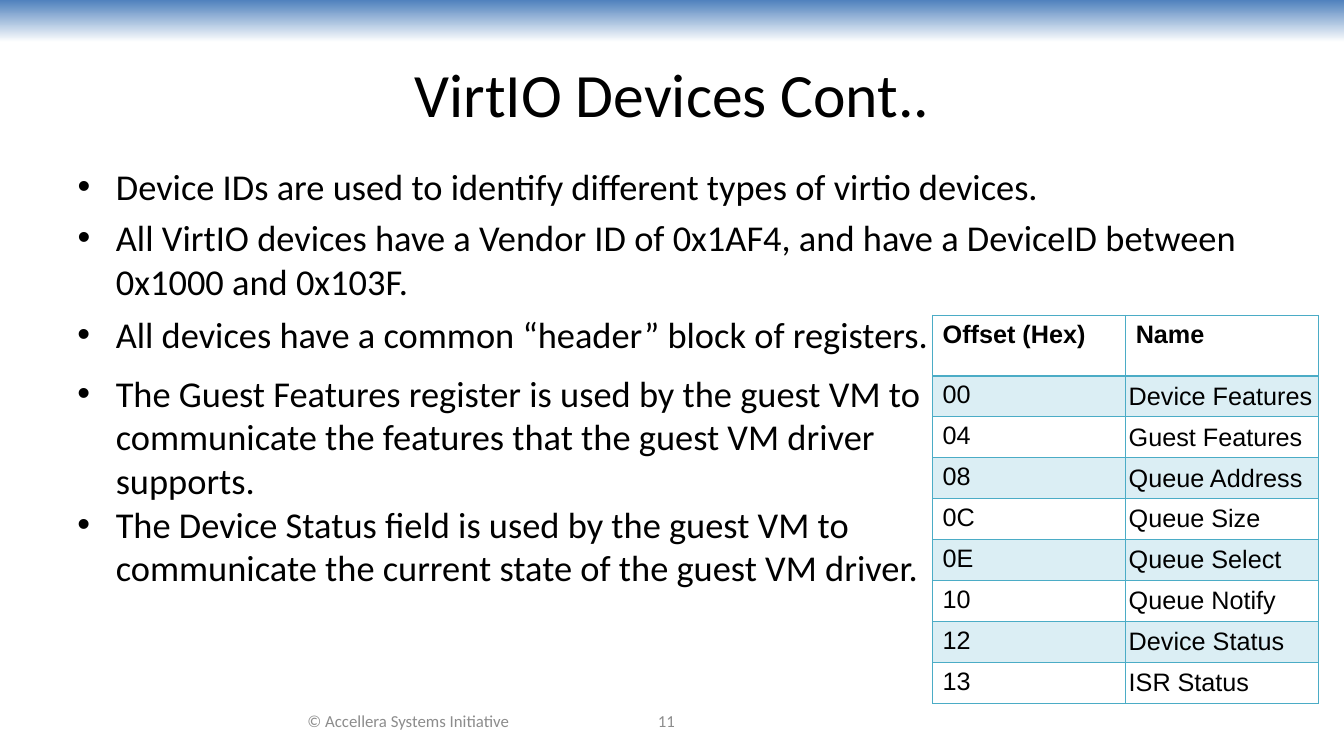
from dataclasses import dataclass

from lxml import etree
from pptx import Presentation
from pptx.dml.color import RGBColor
from pptx.enum.shapes import MSO_SHAPE
from pptx.enum.text import MSO_ANCHOR, MSO_AUTO_SIZE, PP_ALIGN
from pptx.oxml.ns import qn
from pptx.util import Inches, Pt

RECTANGLE = MSO_SHAPE.RECTANGLE
TOP, MIDDLE = MSO_ANCHOR.TOP, MSO_ANCHOR.MIDDLE
LEFT, CENTER = PP_ALIGN.LEFT, PP_ALIGN.CENTER
NO_AUTOFIT = MSO_AUTO_SIZE.NONE


@dataclass(frozen=True)
class Theme:
    """Colours, fonts and type sizes of the deck."""
    ink: RGBColor = RGBColor(0, 0, 0)
    muted: RGBColor = RGBColor(0x8C, 0x8C, 0x8C)
    band: RGBColor = RGBColor(0x4F, 0x81, 0xBD)
    paper: RGBColor = RGBColor(0xFF, 0xFF, 0xFF)
    border: str = "4BACC6"
    stripe: RGBColor = RGBColor(0xDB, 0xEE, 0xF4)
    text_font: str = "Calibri"
    table_font: str = "Arial"
    title_size: int = 44
    body_size: int = 26
    table_size: int = 18
    footer_size: int = 12


THEME = Theme()

INTRO = [
    "Device IDs are used to identify different types of virtio devices.",
    "All VirtIO devices have a Vendor ID of 0x1AF4, and have a DeviceID between 0x1000 and 0x103F.",
]
HEADER_BLOCK = ["All devices have a common “header” block of registers."]
REGISTER_USE = [
    "The Guest Features register is used by the guest VM to communicate the features "
    "that the guest VM driver supports.",
    "The Device Status field is used by the guest VM to communicate the current state "
    "of the guest VM driver.",
]
REGISTERS = [
    ("Offset (Hex)", "Name"),
    ("00", "Device Features"),
    ("04", "Guest Features"),
    ("08", "Queue Address"),
    ("0C", "Queue Size"),
    ("0E", "Queue Select"),
    ("10", "Queue Notify"),
    ("12", "Device Status"),
    ("13", "ISR Status"),
]


def style_text(para, size, color=THEME.ink, font=THEME.text_font, bold=False):
    """Format every run of a paragraph."""
    for span in para.runs:
        span.font.size = Pt(size)
        span.font.name = font
        span.font.bold = bold
        span.font.color.rgb = color


def place(shape, box):
    """Move a shape to a left, top, width, height box in inches."""
    shape.left, shape.top, shape.width, shape.height = map(Inches, box)


def add_band(page, box):
    """Draw the fading band along the top edge."""
    band = page.shapes.add_shape(RECTANGLE, *map(Inches, box))
    band.shadow.inherit = False
    band.line.fill.background()
    band.fill.gradient()
    band.fill.gradient_angle = 270
    for stop, color, position in zip(band.fill.gradient_stops, (THEME.band, THEME.paper), (0, 1)):
        stop.color.rgb = color
        stop.position = position


def fill_title(page, box, text):
    """Place and format the title placeholder."""
    title = page.shapes.title
    place(title, box)
    frame = title.text_frame
    frame.text = text
    frame.auto_size = NO_AUTOFIT
    frame.vertical_anchor = MIDDLE
    frame.paragraphs[0].alignment = CENTER
    style_text(frame.paragraphs[0], THEME.title_size)


def fill_bullets(shape, box, items, gap=0):
    """Place a text shape and fill it with bulleted items."""
    place(shape, box)
    frame = shape.text_frame
    frame.text = "\n".join(items)
    frame.word_wrap = True
    frame.auto_size = NO_AUTOFIT
    frame.vertical_anchor = TOP
    for index, para in enumerate(frame.paragraphs):
        properties = para._p.get_or_add_pPr()
        properties.set("marL", str(Inches(0.38)))
        properties.set("indent", str(-Inches(0.38)))
        etree.SubElement(properties, qn("a:buFont"), typeface="Arial")
        etree.SubElement(properties, qn("a:buChar"), char="•")
        para.space_before = Pt(gap if index else 0)
        para.alignment = LEFT
        style_text(para, THEME.body_size)


def add_bullets(page, box, items):
    """Add a text box of bulleted items."""
    fill_bullets(page.shapes.add_textbox(*map(Inches, box)), box, items)


def set_borders(cell, widths):
    """Draw the four borders of a cell, with widths in points by side."""
    properties = cell._tc.get_or_add_tcPr()
    for index, side in enumerate("LRTB"):
        line = etree.Element(qn(f"a:ln{side}"), w=str(Pt(widths.get(side, 1))))
        solid = etree.SubElement(line, qn("a:solidFill"))
        etree.SubElement(solid, qn("a:srgbClr"), val=THEME.border)
        properties.insert(index, line)


def add_register_table(page, box, rows, header_height=0.6):
    """Add the table of register offsets and names."""
    frame = page.shapes.add_table(len(rows), len(rows[0]), *map(Inches, box))
    table = frame.table
    table.first_row = table.horz_banding = False
    row_height = (box[3] - header_height) / (len(rows) - 1)
    for row_index, values in enumerate(rows):
        is_header = row_index == 0
        table.rows[row_index].height = Inches(header_height if is_header else row_height)
        for column_index, value in enumerate(values):
            cell = table.cell(row_index, column_index)
            cell.text = value
            style_text(cell.text_frame.paragraphs[0], THEME.table_size,
                       font=THEME.table_font, bold=is_header)
            if column_index and not is_header:
                cell.vertical_anchor = MIDDLE
                cell.margin_left = cell.margin_right = Inches(0.03)
                cell.margin_top = cell.margin_bottom = Inches(0.03)
            if row_index % 2:
                cell.fill.solid()
                cell.fill.fore_color.rgb = THEME.stripe
            else:
                cell.fill.background()
            set_borders(cell, {"B": 2} if is_header else {"T": 2} if row_index == 1 else {})


def add_footer(page, box, text):
    """Add one centred footer text."""
    footer = page.shapes.add_textbox(*map(Inches, box))
    frame = footer.text_frame
    frame.text = text
    frame.word_wrap = True
    frame.vertical_anchor = MIDDLE
    frame.paragraphs[0].alignment = CENTER
    style_text(frame.paragraphs[0], THEME.footer_size, THEME.muted)


def build_registers_slide(deck):
    """Build the slide about VirtIO device registers."""
    page = deck.slides.add_slide(deck.slide_layouts[1])
    left, width = 0.67, 12
    add_band(page, (0, 0, 13.33, 0.42))
    fill_title(page, (left, 0.3, width, 1.25), "VirtIO Devices Cont..")
    fill_bullets(page.placeholders[1], (left, 1.58, width, 4.92), INTRO, gap=5.2)
    add_footer(page, (2.44, 6.95, 3.22, 0.4), "© Accellera Systems Initiative")
    add_footer(page, (5.33, 6.95, 2.56, 0.4), "11")
    add_bullets(page, (left, 3.05, 8.67, 0.98), HEADER_BLOCK)
    add_register_table(page, (9.25, 3.13, 3.83, 3.85), REGISTERS)
    add_bullets(page, (left, 3.63, 8.67, 2.29), REGISTER_USE)


def main():
    """Create and save the deck."""
    deck = Presentation()
    deck.slide_width, deck.slide_height = Inches(13.33), Inches(7.5)
    build_registers_slide(deck)
    deck.save("out.pptx")


if __name__ == "__main__":
    main()
